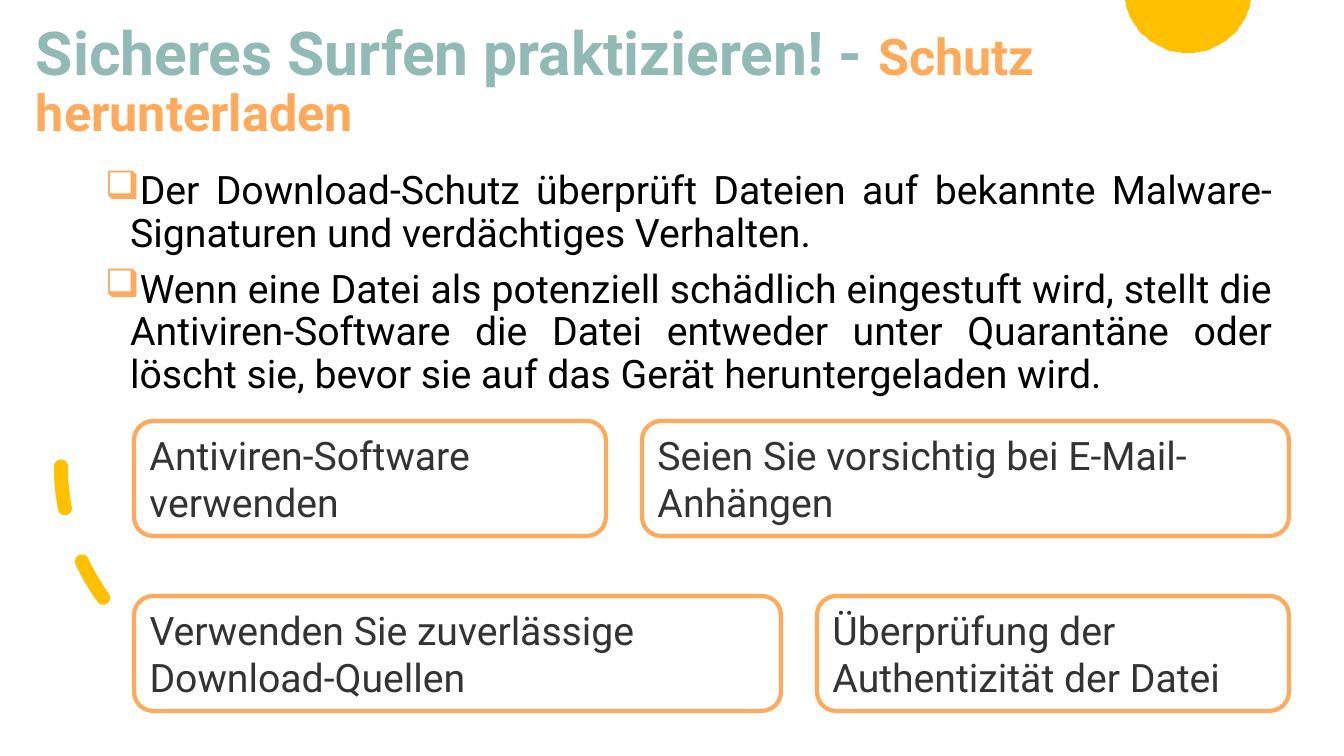
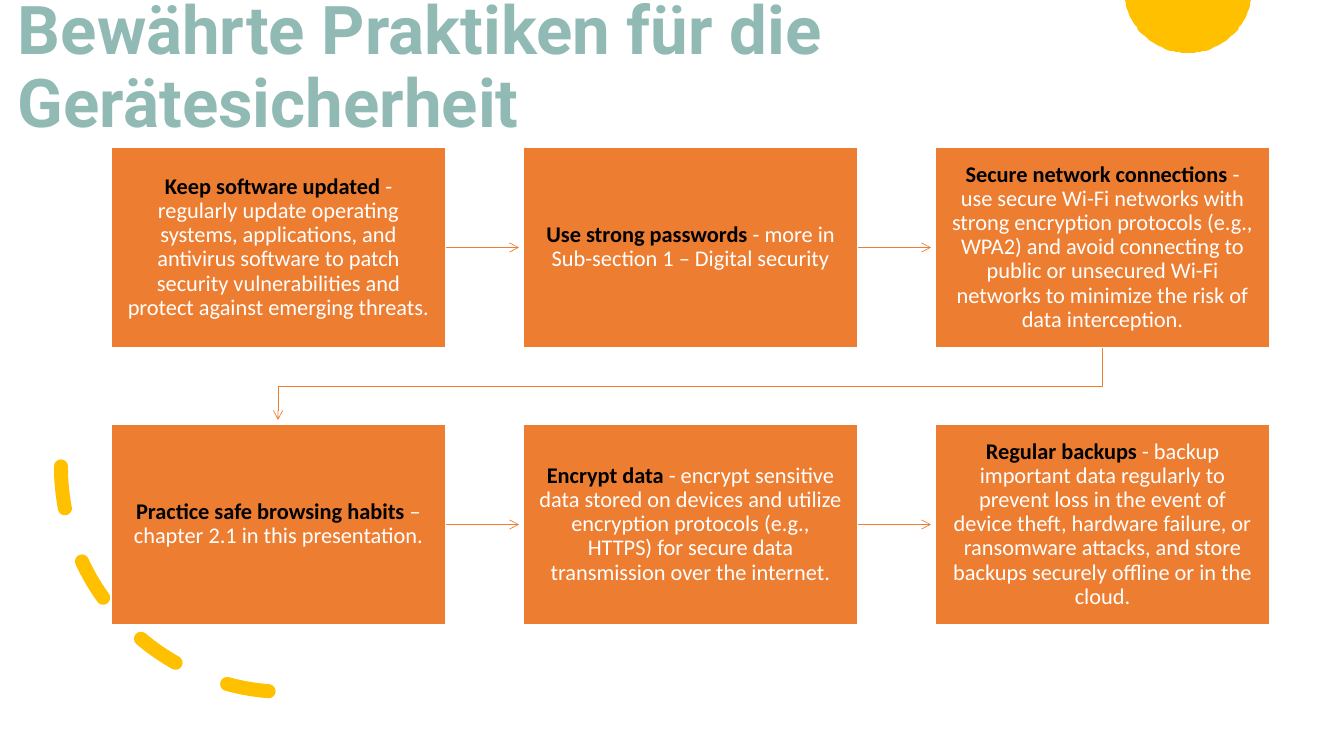
import math

import lxml.etree
import pptx
import pptx.dml.color
import pptx.enum.dml
import pptx.enum.shapes
import pptx.enum.text
import pptx.oxml.ns
import pptx.util

SLIDE_WIDTH, SLIDE_HEIGHT = 1344, 756
SCALE = 12192000 / SLIDE_WIDTH

SHAPE = pptx.enum.shapes.MSO_SHAPE
ALIGN = pptx.enum.text.PP_ALIGN
ANCHOR = pptx.enum.text.MSO_ANCHOR


class Theme:
    sage, apricot, orange = "92BAB5", "FFAA5A", "ED7D31"
    yellow, white, black, charcoal = "FFC000", "FFFFFF", "000000", "333333"
    heading_font, flow_font = "Roboto", "Calibri"
    title, long_title, subtitle, body, flow = 48, 43.2, 36, 28, 16
    tight = 0.9


SURFING_TITLE = [
    ("Sicheres Surfen praktizieren! - ", Theme.long_title, Theme.sage),
    ("Schutz herunterladen", Theme.subtitle, Theme.apricot),
]
PRACTICES_TITLE = [
    ("Bewährte Praktiken für die Gerätesicherheit", Theme.title, Theme.sage),
]
BULLETS = [
    "Der Download-Schutz überprüft Dateien auf bekannte Malware-Signaturen "
    "und verdächtiges Verhalten.",
    "Wenn eine Datei als potenziell schädlich eingestuft wird, stellt die "
    "Antiviren-Software die Datei entweder unter Quarantäne oder löscht sie, "
    "bevor sie auf das Gerät heruntergeladen wird.",
]
NARROW, WIDE = 472, 647
TIP_ROWS = [
    (421, [("Antiviren-Software verwenden", NARROW),
           ("Seien Sie vorsichtig bei E-Mail-Anhängen", WIDE)]),
    (596, [("Verwenden Sie zuverlässige Download-Quellen", WIDE),
           ("Überprüfung der Authentizität der Datei", NARROW)]),
]
PRACTICES = [
    ("Keep software updated ",
     "- regularly update operating systems, applications, and antivirus software "
     "to patch security vulnerabilities and protect against emerging threats."),
    ("Use strong passwords ", "- more in Sub-section 1 – Digital security"),
    ("Secure network connections ",
     "- use secure Wi-Fi networks with strong encryption protocols (e.g., WPA2) "
     "and avoid connecting to public or unsecured Wi-Fi networks to minimize the "
     "risk of data interception."),
    ("Practice safe browsing habits ", "– chapter 2.1 in this presentation."),
    ("Encrypt data ",
     "- encrypt sensitive data stored on devices and utilize encryption protocols "
     "(e.g., HTTPS) for secure data transmission over the internet."),
    ("Regular backups ",
     "- backup important data regularly to prevent loss in the event of device "
     "theft, hardware failure, or ransomware attacks, and store backups securely "
     "offline or in the cloud."),
]


def px(length):
    return pptx.util.Emu(round(length * SCALE))


def rgb(value):
    return pptx.dml.color.RGBColor.from_string(value)


def add_element(parent, tag, **attributes):
    element = lxml.etree.SubElement(parent, pptx.oxml.ns.qn(tag))
    for name, value in attributes.items():
        element.set(name, value)
    return element


def style_line(shape, color, width):
    shape.line.color.rgb = rgb(color)
    shape.line.width = pptx.util.Pt(width)
    return shape.element.spPr.find(pptx.oxml.ns.qn("a:ln"))


def style_arrow(shape):
    outline = style_line(shape, Theme.orange, 0.5)
    add_element(outline, "a:tailEnd", type="arrow")


def add_span(para, text, size, color, font=Theme.heading_font, bold=False):
    span = para.add_run()
    span.text = text
    span.font.size = pptx.util.Pt(size)
    span.font.name = font
    span.font.bold = bold
    span.font.color.rgb = rgb(color)


def add_text_box(page, left, top, width, height, anchor):
    box = page.shapes.add_textbox(px(left), px(top), px(width), px(height))
    box.text_frame.word_wrap = True
    box.text_frame.vertical_anchor = anchor
    return box.text_frame


def add_box(page, kind, left, top, width, height, fill, line, line_width):
    box = page.shapes.add_shape(kind, px(left), px(top), px(width), px(height))
    box.shadow.inherit = False
    box.fill.solid()
    box.fill.fore_color.rgb = rgb(fill)
    style_line(box, line, line_width)
    box.text_frame.word_wrap = True
    box.text_frame.vertical_anchor = ANCHOR.MIDDLE
    return box


def add_outline(page, points, close):
    builder = page.shapes.build_freeform(*points[0], scale=SCALE)
    builder.add_line_segments(points[1:], close=close)
    shape = builder.convert_to_shape()
    shape.shadow.inherit = False
    return shape


def add_sun(page):
    center_x, center_y, radius = 1188, -11, 64
    start = math.degrees(math.asin(-center_y / radius))
    angles = [math.radians(start + (180 - 2 * start) * step / 60) for step in range(61)]
    points = [(center_x + radius * math.cos(angle), center_y + radius * math.sin(angle))
              for angle in angles]
    sun = add_outline(page, points, True)
    sun.fill.solid()
    sun.fill.fore_color.rgb = rgb(Theme.yellow)
    sun.line.fill.background()


def add_dashed_arc(page):
    arc = page.shapes.add_shape(SHAPE.ARC, px(61), px(241), px(451), px(451))
    arc.shadow.inherit = False
    arc.fill.background()
    arc.rotation = 90
    arc.element.spPr.find(pptx.oxml.ns.qn("a:xfrm")).set("flipV", "1")
    outline = style_line(arc, Theme.yellow, 10)
    arc.line.dash_style = pptx.enum.dml.MSO_LINE.DASH
    outline.set("cap", "rnd")


def add_page(deck, title, left, top, width):
    page = deck.slides.add_slide(deck.slide_layouts[6])
    add_sun(page)
    frame = add_text_box(page, left, top, width, 86, ANCHOR.MIDDLE)
    para = frame.paragraphs[0]
    para.line_spacing = Theme.tight
    for text, size, color in title:
        add_span(para, text, size, color, bold=True)
    add_dashed_arc(page)
    return page


def add_bullets(page):
    frame = add_text_box(page, 95, 166, 1187, 269, ANCHOR.TOP)
    for index, text in enumerate(BULLETS):
        para = frame.add_paragraph() if index else frame.paragraphs[0]
        para.alignment = ALIGN.JUSTIFY
        para.line_spacing = Theme.tight
        para.space_before = pptx.util.Pt(10)
        properties = para._p.get_or_add_pPr()
        properties.set("marL", "228600")
        properties.set("indent", "-228600")
        bullet_color = add_element(properties, "a:buClr")
        add_element(bullet_color, "a:srgbClr", val=Theme.apricot)
        add_element(properties, "a:buChar", char="❑")
        add_span(para, text, Theme.body, Theme.black)


def add_tips(page):
    gap = 36
    for top, tips in TIP_ROWS:
        left = 134
        for text, width in tips:
            box = add_box(page, SHAPE.ROUNDED_RECTANGLE, left, top, width, 115,
                          Theme.white, Theme.apricot, 3)
            para = box.text_frame.paragraphs[0]
            para.alignment = ALIGN.LEFT
            add_span(para, text, Theme.body, Theme.charcoal)
            left += width + gap


def add_flow(page):
    columns, left, top, width, height = 3, 111, 147, 335, 201
    pitch_x, pitch_y, clearance = 412, 277, 4
    boxes = []
    for index, (heading, detail) in enumerate(PRACTICES):
        row, column = divmod(index, columns)
        box = add_box(page, SHAPE.RECTANGLE, left + column * pitch_x, top + row * pitch_y,
                      width, height, Theme.orange, Theme.white, 1)
        frame = box.text_frame
        frame.margin_left = frame.margin_right = px(16)
        frame.margin_top = frame.margin_bottom = px(17)
        para = frame.paragraphs[0]
        para.alignment = ALIGN.CENTER
        para.line_spacing = Theme.tight
        add_span(para, heading, Theme.flow, Theme.black, Theme.flow_font, True)
        add_span(para, detail, Theme.flow, Theme.white, Theme.flow_font)
        boxes.append(box)

    for index, box in enumerate(boxes):
        if index % columns == columns - 1:
            continue
        middle = box.top + box.height // 2
        arrow = page.shapes.add_connector(
            pptx.enum.shapes.MSO_CONNECTOR.STRAIGHT, box.left + box.width, middle,
            boxes[index + 1].left - px(clearance), middle)
        arrow.begin_connect(box, 3)
        style_arrow(arrow)
        add_element(arrow.element.spPr, "a:effectLst")

    first_x = left + width // 2
    last_x = first_x + (columns - 1) * pitch_x
    bottom, next_top = top + height, top + pitch_y
    turn = (bottom + next_top) // 2
    points = [(last_x, bottom), (last_x, turn), (first_x, turn),
              (first_x, next_top - clearance)]
    row_arrow = add_outline(page, points, False)
    row_arrow.fill.background()
    style_arrow(row_arrow)


def main():
    deck = pptx.Presentation()
    deck.slide_width, deck.slide_height = px(SLIDE_WIDTH), px(SLIDE_HEIGHT)

    surfing = add_page(deck, SURFING_TITLE, 26, 40, 1226)
    add_bullets(surfing)
    add_tips(surfing)

    practices = add_page(deck, PRACTICES_TITLE, 8, 26, 1053)
    add_flow(practices)

    deck.save("out.pptx")


if __name__ == "__main__":
    main()
